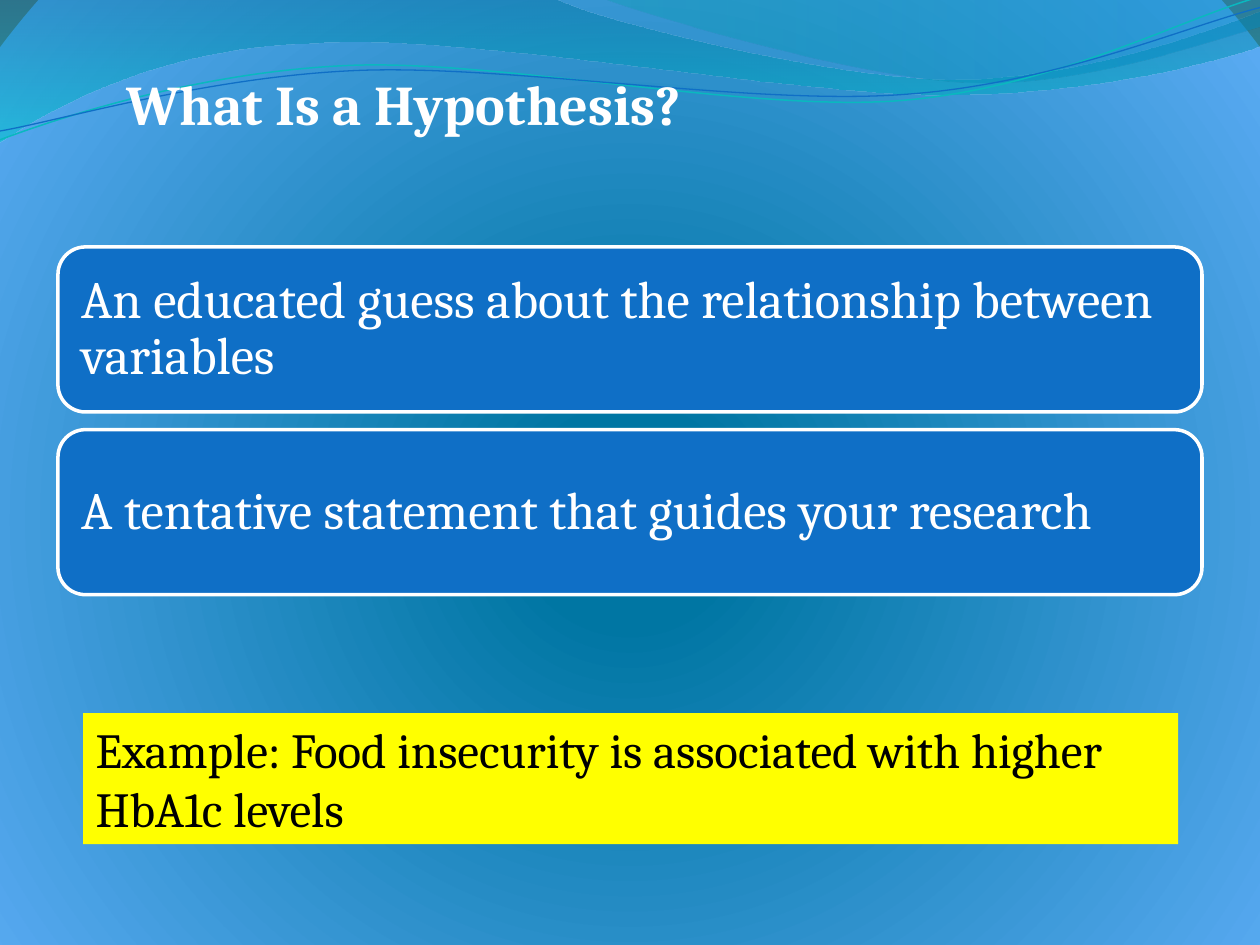
from lxml.etree import SubElement
from pptx import Presentation
from pptx.dml.color import RGBColor
from pptx.enum.shapes import MSO_SHAPE as Shape
from pptx.enum.text import MSO_ANCHOR as Anchor, PP_ALIGN as Align
from pptx.oxml.ns import qn
from pptx.util import Inches, Pt

COLORS = {
    "white": "FFFFFF", "black": "000000", "blue": "0F6FC6", "yellow": "FFFF00",
    "teal": "0AB8BF", "deep": "0076A3", "sky": "59AAF2", "pale": "9EDFFA",
    "ice": "DDFAFF", "slate": "52767C", "ocean": "0074A1", "aqua": "00C6CF",
    "lagoon": "00A1A9", "azure": "008BBF",
}
FONT = "Cambria"
TITLE = "What Is a Hypothesis?"
DEFINITIONS = [
    "An educated guess about the relationship between variables",
    "A tentative statement that guides your research",
]
EXAMPLE = "Example: Food insecurity is associated with higher HbA1c levels"

BACKDROP = [(13, "deep", 100), (100, "sky", 100), (100, "pale", 100),
            (100, "ice", 100), (100, "slate", 100)]
BANDS = [
    {"outline": [
        [(0, 0)], [(4.4, -0.01)],
        [(4.76, 0.17), (6.64, 0.63), (7.58, 0.63)],
        [(8.53, 0.63), (9.58, 0.26), (10, 0.09)],
        [(10.01, 0.36)],
        [(9.83, 0.44), (8.7, 0.76), (7.46, 0.75)],
        [(6.22, 0.75), (3.82, 0.28), (2.57, 0.34)],
        [(1.29, 0.36), (0.46, 0.83), (-0.01, 1.13)]],
     "stops": [(0, "ocean", 45), (100, "aqua", 55)], "angle": 90},
    {"outline": [
        [(4.79, -0.01)],
        [(5.09, 0.11), (6.82, 0.62), (7.69, 0.65)],
        [(8.56, 0.69), (9.61, 0.32), (10, 0.21)],
        [(10, 0)]],
     "stops": [(0, "lagoon", 30), (80, "azure", 45)], "angle": 0},
]
STRANDS = [
    {"outline": [
        [(0, 1.11)],
        [(0.48, 0.93), (1.58, 0.57), (2.77, 0.52)],
        [(3.95, 0.47), (5.93, 0.89), (7.13, 0.8)],
        [(8.33, 0.71), (9.38, 0.15), (9.98, -0.02)]],
     "color": "teal", "width": 0.85},
    {"outline": [
        [(0, 1.04)],
        [(0.47, 0.96), (1.64, 0.61), (2.83, 0.56)],
        [(4.03, 0.51), (5.97, 0.84), (7.17, 0.75)],
        [(8.36, 0.67), (9.41, 0.21), (10, 0.06)]],
     "color": "blue", "width": 0.75},
]
CARD_LEFT, CARD_TOP, CARD_WIDTH, CARD_HEIGHT, CARD_PITCH = 0.46, 1.96, 9.08, 1.31, 1.45


def rgb(name):
    return RGBColor.from_string(COLORS[name])


def apply_gradient(holder, stops, angle=None, focus=None):
    solid = holder.find(qn("a:solidFill"))
    gradient = SubElement(holder, qn("a:gradFill"), rotWithShape="1")
    stop_list = SubElement(gradient, qn("a:gsLst"))
    for position, color, opacity in stops:
        stop = SubElement(stop_list, qn("a:gs"), pos=str(position * 1000))
        tint = SubElement(stop, qn("a:srgbClr"), val=COLORS[color])
        if opacity < 100:
            SubElement(tint, qn("a:alpha"), val=str(opacity * 1000))
    if focus:
        circle = SubElement(gradient, qn("a:path"), path="circle")
        SubElement(circle, qn("a:fillToRect"),
                   {side: str(share * 1000) for side, share in focus.items()})
    else:
        SubElement(gradient, qn("a:lin"), ang=str(angle * 60000), scaled="1")
    holder.replace(solid, gradient)


def add_wave(slide, outline, closed):
    segments = [[(Inches(x), Inches(y)) for x, y in segment] for segment in outline]
    anchors = [segment[-1] for segment in segments]
    builder = slide.shapes.build_freeform(*anchors[0])
    builder.add_line_segments(anchors[1:], close=closed)
    wave = builder.convert_to_shape()
    wave.shadow.inherit = False
    sides = list(wave.element.iter(qn("a:lnTo")))
    for side, segment in zip(sides, segments[1:]):
        if len(segment) == 3:
            track = side.getparent()
            curve = SubElement(track, qn("a:cubicBezTo"))
            for x, y in segment:
                SubElement(curve, qn("a:pt"), x=str(x - wave.left), y=str(y - wave.top))
            track.replace(side, curve)
    return wave


def write(shape, text, size, color, bold=False, spacing=None, **frame_format):
    frame = shape.text_frame
    frame.word_wrap = True
    for key, value in frame_format.items():
        setattr(frame, key, value)
    paragraph = frame.paragraphs[0]
    paragraph.alignment = Align.LEFT
    paragraph.line_spacing = spacing
    run = paragraph.add_run()
    run.text = text
    for key, value in {"name": FONT, "size": Pt(size), "bold": bold}.items():
        setattr(run.font, key, value)
    run.font.color.rgb = rgb(color)


def add_panel(slide, kind, box, fill):
    panel = slide.shapes.add_shape(kind, *map(Inches, box))
    panel.shadow.inherit = False
    panel.fill.solid()
    panel.fill.fore_color.rgb = rgb(fill)
    return panel


def main():
    deck = Presentation()
    deck.slide_width, deck.slide_height = Inches(10), Inches(7.5)
    slide = deck.slides.add_slide(deck.slide_layouts[5])

    slide.background.fill.solid()
    apply_gradient(slide.element.find(".//" + qn("p:bgPr")), BACKDROP,
                   focus={"l": 10, "t": 110, "r": 10, "b": 100})

    for band in BANDS:
        wave = add_wave(slide, band["outline"], True)
        wave.line.fill.background()
        wave.fill.solid()
        apply_gradient(wave.element.spPr, band["stops"], band["angle"])
    for strand in STRANDS:
        wave = add_wave(slide, strand["outline"], False)
        wave.fill.background()
        wave.line.color.rgb = rgb(strand["color"])
        wave.line.width = Pt(strand["width"])

    title = slide.shapes.title
    title.left, title.top, title.width, title.height = map(Inches, (0.9, 0.5, 8.96, 0.64))
    write(title, TITLE, 32, "white", bold=True, vertical_anchor=Anchor.TOP)
    title.element.getparent().append(title.element)

    for index, definition in enumerate(DEFINITIONS):
        top = CARD_TOP + index * CARD_PITCH
        card = add_panel(slide, Shape.ROUNDED_RECTANGLE,
                         (CARD_LEFT, top, CARD_WIDTH, CARD_HEIGHT), "blue")
        card.line.color.rgb = rgb("white")
        card.line.width = Pt(2)
        write(card, definition, 30, "white", spacing=0.9, vertical_anchor=Anchor.MIDDLE,
              margin_left=Inches(0.12), margin_right=Inches(0.12))

    example = add_panel(slide, Shape.RECTANGLE, (0.66, 5.66, 8.69, 1.04), "yellow")
    example.line.fill.background()
    write(example, EXAMPLE, 28, "black", vertical_anchor=Anchor.TOP)

    deck.save("out.pptx")


if __name__ == "__main__":
    main()
